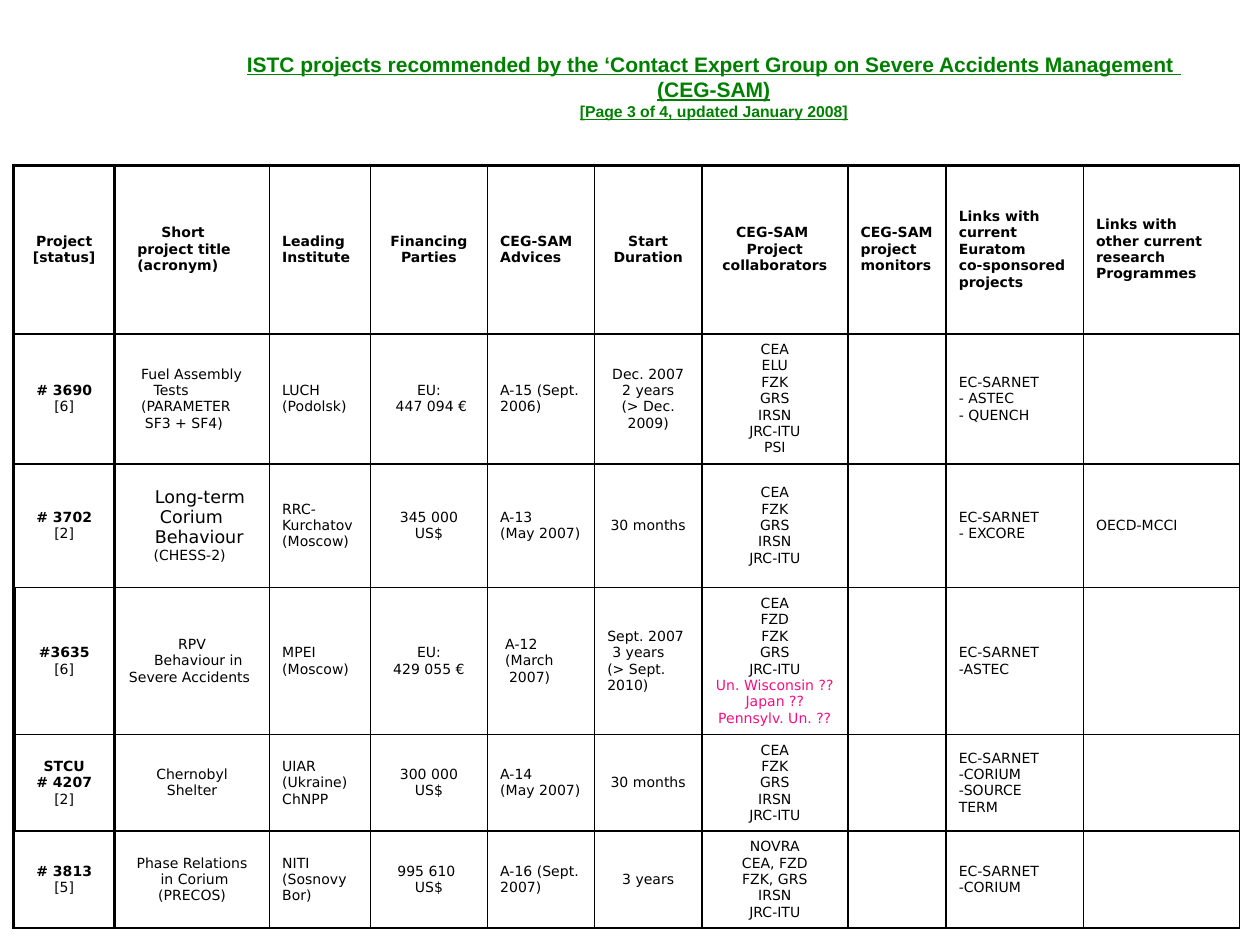
from lxml.etree import SubElement
from pptx import Presentation
from pptx.dml.color import RGBColor
from pptx.enum.text import MSO_ANCHOR, PP_ALIGN
from pptx.oxml.ns import qn
from pptx.util import Inches, Pt

BLACK, WHITE, GREEN, PINK = "000000", "FFFFFF", "008000", "F50F82"

TITLE = [
    ("ISTC projects recommended by the ‘Contact Expert Group on Severe Accidents Management ", 12),
    ("(CEG-SAM)", 12),
    ("[Page 3 of 4, updated January 2008]", 9),
]

PROJECTS = [
    ["Project|[status]", "Short|project title|(acronym)", "Leading|Institute",
     "Financing|Parties", "CEG-SAM|Advices", "Start|Duration",
     "CEG-SAM|Project|collaborators", "CEG-SAM|project|monitors",
     "Links with|current|Euratom|co-sponsored|projects",
     "Links with|other current|research|Programmes"],
    ["# 3690|[6]", "Fuel Assembly|Tests|(PARAMETER|SF3 + SF4)", "LUCH|(Podolsk)",
     "EU:|447 094 €", "A-15 (Sept. 2006)", "Dec. 2007|2 years|(> Dec. 2009)",
     "CEA|ELU|FZK|GRS|IRSN|JRC-ITU|PSI", "", "EC-SARNET|- ASTEC|- QUENCH", ""],
    ["# 3702|[2]", "Long-term|Corium|Behaviour|(CHESS-2)", "RRC-|Kurchatov|(Moscow)",
     "345 000|US$", "A-13|(May 2007)", "30 months",
     "CEA|FZK|GRS|IRSN|JRC-ITU", "", "EC-SARNET|- EXCORE", "OECD-MCCI"],
    ["#3635|[6]", "RPV|Behaviour in|Severe Accidents", "MPEI|(Moscow)",
     "EU:|429 055 €", "A-12|(March|2007)", "Sept. 2007|3 years|(> Sept. 2010)",
     "CEA|FZD|FZK|GRS|JRC-ITU|Un. Wisconsin ??|Japan ??|Pennsylv. Un. ??", "",
     "EC-SARNET|-ASTEC", ""],
    ["STCU|# 4207|[2]", "Chernobyl|Shelter", "UIAR|(Ukraine)|ChNPP",
     "300 000|US$", "A-14|(May 2007)", "30 months",
     "CEA|FZK|GRS|IRSN|JRC-ITU", "", "EC-SARNET|-CORIUM|-SOURCE|TERM", ""],
    ["# 3813|[5]", "Phase Relations|in Corium|(PRECOS)", "NITI|(Sosnovy|Bor)",
     "995 610|US$", "A-16 (Sept. 2007)", "3 years",
     "NOVRA|CEA, FZD|FZK, GRS|IRSN|JRC-ITU", "", "EC-SARNET|-CORIUM", ""],
]
COLUMN_WIDTHS = [0.8, 1.23, 0.8, 0.93, 0.85, 0.85, 1.16, 0.78, 1.09, 1.24]
ROW_HEIGHTS = [1.34, 1.03, 0.98, 1.17, 0.76, 0.77]
OUTER_LINES = [2, 2, 2, 2.25, 2.25, 2]

STATUS, ACRONYM, FINANCING, START, COLLABORATORS = 0, 1, 3, 5, 6
CENTRED = {STATUS, FINANCING, START, COLLABORATORS}
SWITCHED = {(3, ACRONYM), (4, ACRONYM), (5, ACRONYM), (3, START)}
LARGE_TITLE = (2, ACRONYM)
LEFT_INDENTS = {
    (0, 1): [0.27, 0.08, 0.08],
    (1, 1): [0.11, 0.21, 0.11, 0.14],
    (1, 3): [0, 0.04],
    (2, 1): [0.22, 0.26, 0.22, 0.21],
    (3, 1): [0, 0.1, 0],
    (3, 4): [0.04, 0.04, 0.07],
    (3, 5): [0, 0.04, 0],
    (5, 1): [0, 0.04, 0],
}
RIGHT_INDENTS = {(0, 6): [0.04, 0, 0], (3, 1): [0, 0, 0.04], (5, 3): [0.04, 0]}


def colour(value):
    return RGBColor.from_string(value)


def add_run(paragraph, text, size, face, ink, bold, underline=False):
    run = paragraph.add_run()
    run.text = text
    run.font.size, run.font.name = Pt(size), face
    run.font.bold, run.font.underline = bold, underline
    run.font.color.rgb = colour(ink)


def draw_borders(cell, row, column):
    outer = OUTER_LINES[row]
    widths = {
        "L": outer if column < 2 else 1,
        "R": outer if column == 0 else 1,
        "T": 2 if row == 0 else 1,
        "B": 1,
    }
    properties = cell._tc.get_or_add_tcPr()
    for side, width in widths.items():
        line = SubElement(properties, qn(f"a:ln{side}"), w=str(Pt(width)))
        SubElement(SubElement(line, qn("a:solidFill")), qn("a:srgbClr"), val=BLACK)


def write_cell(cell, content, row, column):
    place = (row, column)
    centred = (column in CENTRED) != (place in SWITCHED)
    lines = content.split("|")
    level = [0] * len(lines)
    lefts, rights = LEFT_INDENTS.get(place, level), RIGHT_INDENTS.get(place, level)
    cell.vertical_anchor = MSO_ANCHOR.MIDDLE
    for number, (text, left, right) in enumerate(zip(lines, lefts, rights)):
        frame = cell.text_frame
        paragraph = frame.add_paragraph() if number else frame.paragraphs[0]
        paragraph.alignment = PP_ALIGN.CENTER if centred else PP_ALIGN.LEFT
        indents = paragraph._p.get_or_add_pPr()
        indents.set("marL", str(Inches(left)))
        indents.set("marR", str(Inches(right)))
        bracketed = text.startswith(("[", "("))
        bold = row == 0 or (column == STATUS and not bracketed)
        size = 10 if place == LARGE_TITLE and not bracketed else 8
        ink = PINK if text.endswith("??") else BLACK
        add_run(paragraph, text, size, "DejaVu Sans", ink, bold)


def add_title(slide):
    frame = slide.shapes.add_textbox(
        Inches(1.5), Inches(0.36), Inches(8.33), Inches(0.65)).text_frame
    frame.word_wrap = True
    heading = frame.paragraphs[0]
    heading.alignment = PP_ALIGN.CENTER
    for number, (text, size) in enumerate(TITLE):
        if number:
            heading.add_line_break()
        add_run(heading, text, size, "Arial", GREEN, True, True)


def add_projects(slide):
    table = slide.shapes.add_table(
        len(PROJECTS), len(COLUMN_WIDTHS), Inches(0.11), Inches(1.31),
        Inches(sum(COLUMN_WIDTHS)), Inches(sum(ROW_HEIGHTS))).table
    table.first_row = table.horz_banding = False
    for column, width in zip(table.columns, COLUMN_WIDTHS):
        column.width = Inches(width)
    for row, height in zip(table.rows, ROW_HEIGHTS):
        row.height = Inches(height)
    for row, project in enumerate(PROJECTS):
        for column, content in enumerate(project):
            cell = table.cell(row, column)
            draw_borders(cell, row, column)
            if row == 0:
                cell.fill.solid()
                cell.fill.fore_color.rgb = colour(WHITE)
            else:
                cell.fill.background()
            if content:
                write_cell(cell, content, row, column)


def main():
    deck = Presentation()
    deck.slide_width, deck.slide_height = Inches(10), Inches(7.5)
    slide = deck.slides.add_slide(deck.slide_layouts[6])
    add_title(slide)
    add_projects(slide)
    deck.save("out.pptx")


if __name__ == "__main__":
    main()
